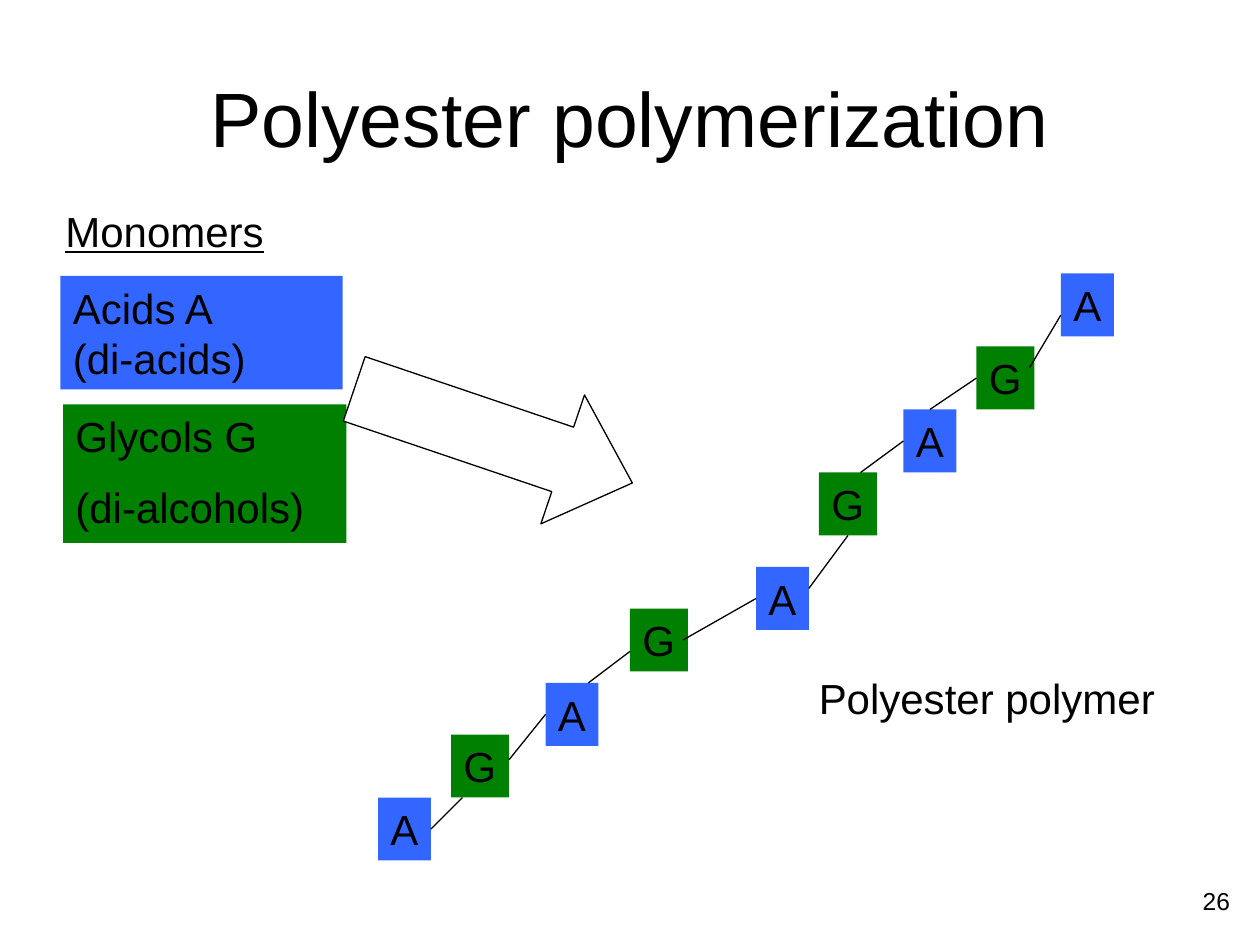
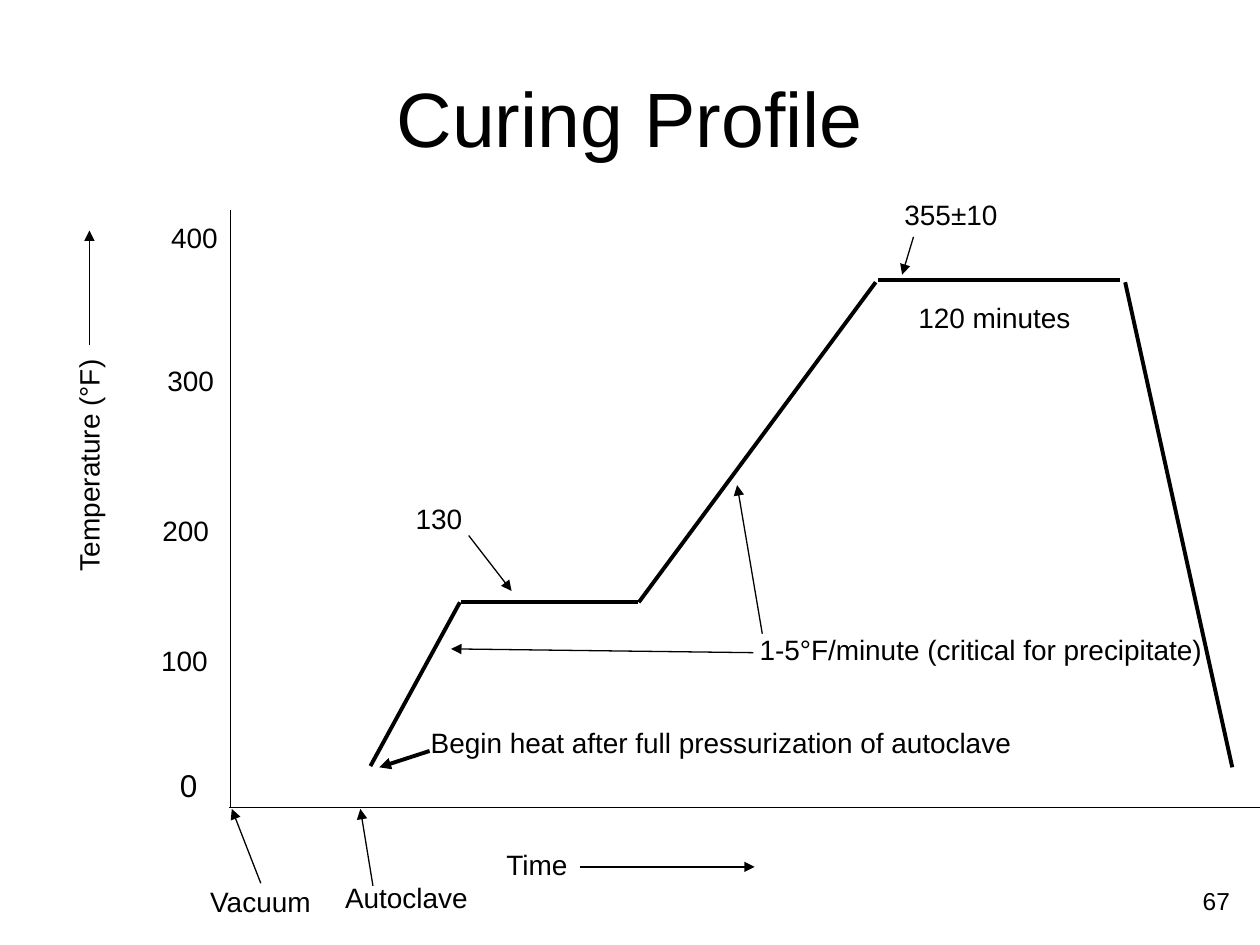
import collections
import pptx
import pptx.dml.color
import pptx.enum.shapes
import pptx.enum.text
import pptx.oxml.ns
import pptx.oxml.xmlchemy
import pptx.util

EMU_PER_PX = 9144
FONT = "Arial"
COLORS = {"ink": "000000", "paper": "FFFFFF", "acid": "3366FF", "glycol": "008000"}
THIN, THICK = 0.75, 2.25
TITLE_ONLY = 5
MONOMER_WIDTHS = {"A": 42, "G": 46}
MONOMER_COLORS = {"A": "acid", "G": "glycol"}
TOP, LEFT, BOTTOM, RIGHT = range(4)

Box = collections.namedtuple("Box", "left top width height")
SHAPES = pptx.enum.shapes.MSO_SHAPE
ALIGN = pptx.enum.text.PP_ALIGN


def px(length):
    """Turn px into EMU."""
    return pptx.util.Emu(length * EMU_PER_PX)


def color(name):
    """Look up a palette colour."""
    return pptx.dml.color.RGBColor.from_string(COLORS[name])


def inside(box, left, top, width, height):
    """Place a box relative to the corner of another."""
    return Box(box.left + left, box.top + top, width, height)


def write(shape, lines, size, align=ALIGN.LEFT, wrap=False, gap=0, underline=None):
    """Fill a shape with one paragraph per line."""
    frame = shape.text_frame
    frame.word_wrap = wrap
    frame.vertical_anchor = pptx.enum.text.MSO_ANCHOR.TOP
    for index, line in enumerate(lines):
        paragraph = frame.add_paragraph() if index else frame.paragraphs[0]
        paragraph.alignment = align
        if index and gap:
            paragraph.space_before = pptx.util.Pt(gap)
        run = paragraph.add_run()
        run.text = line
        run.font.name = FONT
        run.font.size = pptx.util.Pt(size)
        run.font.color.rgb = color("ink")
        run.font.underline = underline


def add_label(slide, box, text, size=16, **style):
    """Add a single line of text."""
    shape = slide.shapes.add_textbox(*map(px, box))
    write(shape, [text], size, **style)
    return shape


def add_block(slide, box, fill, kind=SHAPES.RECTANGLE):
    """Add a filled shape without outline or shadow."""
    shape = slide.shapes.add_shape(kind, *map(px, box))
    shape.shadow.inherit = False
    shape.fill.solid()
    shape.fill.fore_color.rgb = color(fill)
    shape.line.fill.background()
    return shape


def add_line(slide, box, ends, weight=THIN, arrow=False):
    """Draw a straight line between two points of a box."""
    x1, y1, x2, y2 = ends
    points = (box.left + x1, box.top + y1, box.left + x2, box.top + y2)
    connector = slide.shapes.add_connector(
        pptx.enum.shapes.MSO_CONNECTOR.STRAIGHT, *map(px, points))
    connector.line.color.rgb = color("ink")
    connector.line.width = pptx.util.Pt(weight)
    properties = connector._element.spPr
    if arrow:
        tail = pptx.oxml.xmlchemy.OxmlElement("a:tailEnd")
        tail.set("type", "triangle")
        properties.find(pptx.oxml.ns.qn("a:ln")).append(tail)
    properties.append(pptx.oxml.xmlchemy.OxmlElement("a:effectLst"))
    return connector


def add_titled_slide(presentation, title, number):
    """Start a slide with its title and page number."""
    slide = presentation.slides.add_slide(presentation.slide_layouts[TITLE_ONLY])
    shape = slide.shapes.title
    shape.left, shape.top, shape.width, shape.height = map(px, Box(50, 30, 900, 125))
    write(shape, [title], 44, align=ALIGN.CENTER, wrap=True)
    shape.text_frame.vertical_anchor = pptx.enum.text.MSO_ANCHOR.MIDDLE
    add_label(slide, Box(925, 698, 61, 36), number, 14, align=ALIGN.RIGHT, wrap=True)
    return slide


def draw_monomers(slide, box):
    """Show the two monomer families and the reaction arrow."""
    add_label(slide, inside(box, 0, 0, 178, 50), "Monomers", 24, underline=True)
    glycols = add_block(slide, inside(box, 8, 163, 225, 110), "glycol")
    write(glycols, ["Glycols G", "(di-alcohols)"], 24, wrap=True, gap=12)
    acids = add_block(slide, inside(box, 6, 61, 224, 90), "acid")
    write(acids, ["Acids A", "(di-acids)"], 24, wrap=True)
    arrow = add_block(slide, inside(box, 233, 134, 233, 108), "paper", SHAPES.RIGHT_ARROW)
    arrow.adjustments[0], arrow.adjustments[1] = 0.5, 0.54
    arrow.rotation = 18.7
    arrow.line.color.rgb = color("ink")
    arrow.line.width = pptx.util.Pt(THIN)


def draw_chain(slide, box):
    """Link alternating acids and glycols into a polymer."""
    corners = [(0, 416), (58, 366), (133, 325), (200, 266), (300, 233),
               (350, 158), (417, 108), (475, 58), (542, 0)]
    units = []
    for index, corner in enumerate(corners):
        letter = "AG"[index % 2]
        unit = add_block(slide, inside(box, *corner, MONOMER_WIDTHS[letter], 50),
                         MONOMER_COLORS[letter])
        write(unit, [letter], 24)
        units.append(unit)
    bonds = [
        ((42, 441, 67, 416), RIGHT, None),
        ((104, 386, 133, 350), None, LEFT),
        ((167, 325, 200, 300), None, None),
        ((242, 291, 300, 258), None, LEFT),
        ((342, 250, 375, 208), None, BOTTOM),
        ((383, 158, 417, 133), None, LEFT),
        ((442, 108, 475, 83), TOP, LEFT),
        ((517, 75, 542, 33), None, None),
    ]
    for (ends, start_side, end_side), start, end in zip(bonds, units, units[1:]):
        bond = add_line(slide, box, ends)
        if start_side is not None:
            bond.begin_connect(start, start_side)
        if end_side is not None:
            bond.end_connect(end, end_side)
    add_label(slide, inside(box, 340, 312, 287, 50), "Polyester polymer", 24)


def draw_axes(slide, box):
    """Draw the time and temperature axes with their labels."""
    add_line(slide, box, (0, 0, 0, box.height))
    add_line(slide, box, (-1, box.height, box.width, box.height))
    add_label(slide, inside(box, -50, 436, 34, 40), "0", 18)
    ticks = [("100", -65, 339), ("200", -64, 236), ("300", -60, 117), ("400", -57, 3)]
    for text, left, top in ticks:
        add_label(slide, inside(box, left, top, 57, 37), text)
    temperature = add_label(slide, inside(box, -208, 182, 191, 37), "Temperature (°F)")
    temperature.rotation = 270
    add_label(slide, inside(box, 209, 501, 69, 37), "Time")
    for ends in [(-112, 107, -112, 16), (277, 521, 416, 521)]:
        add_line(slide, box, ends, arrow=True)


def draw_heat_profile(slide, box):
    """Draw the ramps and holds of the cure."""
    stages = [(111, 441, 182, 311), (183, 311, 323, 311), (324, 311, 512, 57),
              (514, 55, 706, 55), (710, 57, 795, 442)]
    for ends in stages:
        add_line(slide, box, ends, THICK)


def draw_notes(slide, box):
    """Annotate the profile and point at its stages."""
    notes = [
        ("Vacuum", -26, 530, 102),
        ("Autoclave", 81, 527, 118),
        ("355±10", 525, -15, 94),
        ("120 minutes", 536, 67, 141),
        ("130", 137, 226, 57),
        ("1-5°F/minute (critical for precipitate)", 410, 330, 373),
        ("Begin heat after full pressurization of autoclave", 149, 404, 482),
    ]
    for text, left, top, width in notes:
        add_label(slide, inside(box, left, top, width, 37), text)
    pointers = [(24, 534, 1, 475), (113, 536, 103, 475), (542, 21, 533, 51),
                (189, 258, 223, 302), (422, 336, 402, 218), (415, 351, 175, 348)]
    for ends in pointers:
        add_line(slide, box, ends, arrow=True)
    add_line(slide, box, (158, 429, 118, 442), THICK, arrow=True)


def main():
    """Build and save the presentation."""
    presentation = pptx.Presentation()
    presentation.slide_width, presentation.slide_height = px(1000), px(750)

    slide = add_titled_slide(presentation, "Polyester polymerization", "26")
    draw_monomers(slide, Box(42, 158, 466, 273))
    draw_chain(slide, Box(300, 217, 584, 466))

    slide = add_titled_slide(presentation, "Curing Profile", "67")
    plot = Box(183, 167, 817, 474)
    draw_axes(slide, plot)
    draw_heat_profile(slide, plot)
    draw_notes(slide, plot)

    presentation.save("out.pptx")


if __name__ == "__main__":
    main()
